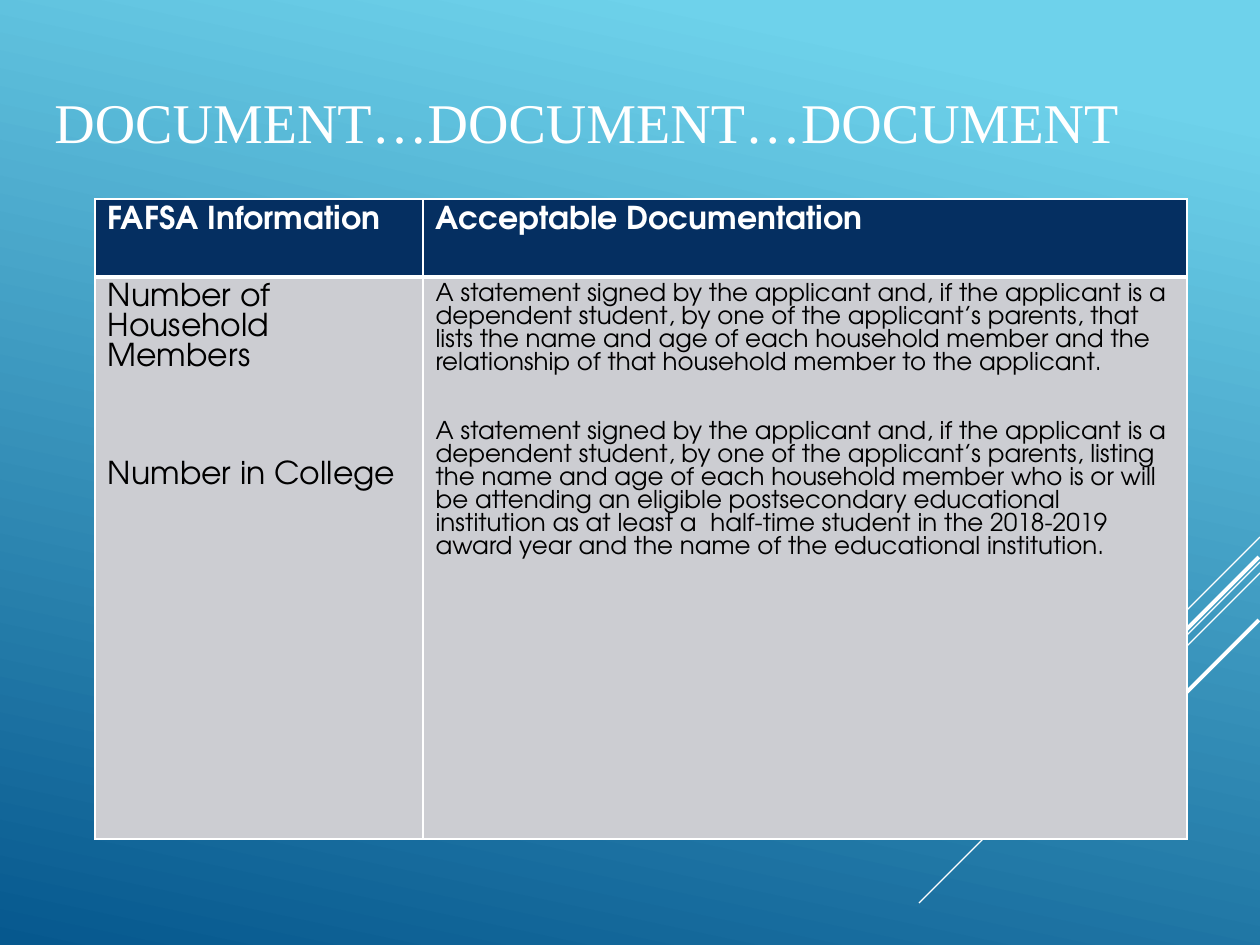
from lxml import etree
from pptx import Presentation
from pptx import util as u
from pptx.dml.color import RGBColor
from pptx.enum import shapes, text
from pptx.oxml import ns

PX = 914400 / 126
THEME = {
    "sky": "6ED2EB", "deep": "06588E", "navy": "052F61", "grey": "CCCDD2",
    "white": "FFFFFF", "black": "000000",
    "title_font": "Times New Roman", "table_font": "TeX Gyre Adventor",
    "title": 32, "label": 18, "detail": 14, "leading": 0.94,
}


def px(*lengths):
    return [u.Emu(round(length * PX)) for length in lengths]


def write(paragraph, words, color, **font_format):
    run = paragraph.add_run()
    run.text = words
    run.font.color.rgb = RGBColor.from_string(THEME[color])
    for key, value in font_format.items():
        setattr(run.font, key, value)


deck = Presentation()
deck.slide_width, deck.slide_height = px(1260, 945)
slide = deck.slides.add_slide(deck.slide_layouts[6])

backdrop = slide.background.fill
backdrop.gradient()
backdrop.gradient_angle = 258
for stop, (position, color) in zip(backdrop.gradient_stops, [(0.1, "sky"), (1, "deep")]):
    stop.position = position
    stop.color.rgb = RGBColor.from_string(THEME[color])

rays = [
    (1260, 537, 105, 0.75),
    (1260, 562, 341, 0.75),
    (1260, 573, 217, 0.75),
    (1259, 557, 198, 2.25),
    (1259, 620, 144, 2.25),
]
for x, y, reach, weight in rays:
    ray = slide.shapes.add_connector(
        shapes.MSO_CONNECTOR.STRAIGHT, *px(x, y, x - reach, y + reach))
    ray.line.color.rgb = RGBColor.from_string(THEME["white"])
    ray.line.width = u.Pt(weight)
    etree.SubElement(ray._element.spPr, ns.qn("a:effectLst"))

columns = [328, 764]
rows = [78, 562]
documents = slide.shapes.add_table(
    2, 2, *px(95, 199, sum(columns), sum(rows))).table
for column, width in zip(documents.columns, px(*columns)):
    column.width = width
for row, height in zip(documents.rows, px(*rows)):
    row.height = height

requirements = [
    [["FAFSA Information"], ["Acceptable Documentation"]],
    [
        ["Number of Household Members", "Number in College"],
        [
            "A statement signed by the applicant and, if the applicant is a dependent student, "
            "by one of the applicant’s parents, that lists the name and age of each household "
            "member and the relationship of that household member to the applicant.",
            "A statement signed by the applicant and, if the applicant is a dependent student, "
            "by one of the applicant’s parents, listing the name and age of each household member "
            "who is or will be attending an eligible postsecondary educational institution as at "
            "least a  half-time student in the 2018-2019 award year and the name of the "
            "educational institution.",
        ],
    ],
]
row_styles = [
    {"fill": "navy", "color": "white", "bold": True, "sizes": ["label", "label"],
     "borders": {"lnL": 1, "lnR": 1, "lnT": 1, "lnB": 3}},
    {"fill": "grey", "color": "black", "bold": False, "sizes": ["label", "detail"],
     "borders": {"lnL": 1, "lnR": 1, "lnT": 3, "lnB": 1}},
]
gap_lines = [3, 2]
for r, (entries, style) in enumerate(zip(requirements, row_styles)):
    for c, (entry, size_name) in enumerate(zip(entries, style["sizes"])):
        cell = documents.cell(r, c)
        cell.fill.solid()
        cell.fill.fore_color.rgb = RGBColor.from_string(THEME[style["fill"]])
        cell_format = cell._tc.get_or_add_tcPr()
        for order, (side, weight) in enumerate(style["borders"].items()):
            border = etree.Element(ns.qn(f"a:{side}"), w=str(u.Pt(weight)))
            paint = etree.SubElement(border, ns.qn("a:solidFill"))
            etree.SubElement(paint, ns.qn("a:srgbClr"), val=THEME["white"])
            cell_format.insert(order, border)
        size = THEME[size_name]
        leading = u.Pt(size * THEME["leading"])
        for i, words in enumerate(entry):
            frame = cell.text_frame
            paragraph = frame.add_paragraph() if i else frame.paragraphs[0]
            paragraph.line_spacing = leading
            paragraph.space_before = leading * gap_lines[c] * i
            write(paragraph, words, style["color"], size=u.Pt(size),
                  name=THEME["table_font"], bold=style["bold"])

heading = slide.shapes.add_textbox(*px(42, 42, 1124, 158)).text_frame
heading_format = {"word_wrap": True, "vertical_anchor": text.MSO_ANCHOR.MIDDLE}
for key, value in heading_format.items():
    setattr(heading, key, value)
write(heading.paragraphs[0], "DOCUMENT…DOCUMENT…DOCUMENT", "white",
      size=u.Pt(THEME["title"]), name=THEME["title_font"])

deck.save("out.pptx")
